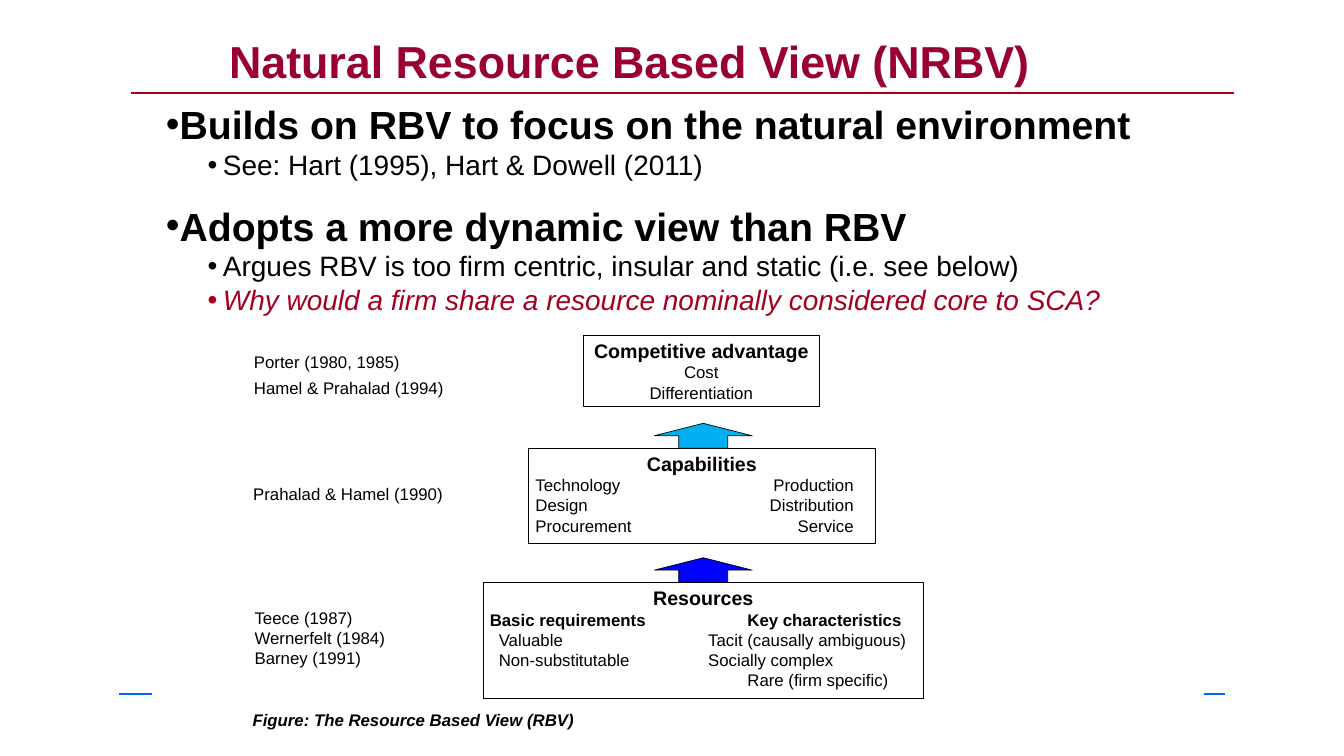
"""Build the Natural Resource Based View slide."""
from lxml import etree
from pptx import Presentation
from pptx.dml.color import RGBColor
from pptx.enum.shapes import MSO_CONNECTOR, MSO_SHAPE
from pptx.enum.text import MSO_ANCHOR, PP_ALIGN
from pptx.oxml.ns import qn
from pptx.util import Pt

STRAIGHT = MSO_CONNECTOR.STRAIGHT
RECTANGLE, UP_ARROW = MSO_SHAPE.RECTANGLE, MSO_SHAPE.UP_ARROW
TOP, MIDDLE = MSO_ANCHOR.TOP, MSO_ANCHOR.MIDDLE
LEFT, CENTER = PP_ALIGN.LEFT, PP_ALIGN.CENTER
COLORS = {"title": "990033", "accent": "A50021", "footer": "0066FF", "black": "000000",
          "light arrow": "00B0F0", "dark arrow": "0101FF"}


def color(name):
    return RGBColor.from_string(COLORS[name])


def write(frame, text, size=18, bold=False, italic=False, ink="black", align=LEFT,
          before=0, bullet=False, margin=0, hanging=0, tabs=()):
    first = frame.paragraphs[0]
    para = frame.add_paragraph() if first.runs else first
    para.alignment, para.space_before = align, Pt(before)
    span = para.add_run()
    span.text = text
    font = span.font
    font.name, font.size, font.bold, font.italic = "Arial", Pt(size), bold, italic
    font.color.rgb = color(ink)
    properties = para._p.get_or_add_pPr()
    if bullet:
        properties.set("marL", str(Pt(margin)))
        properties.set("indent", str(-Pt(hanging)))
        etree.SubElement(properties, qn("a:buFont"), typeface="Arial")
        etree.SubElement(properties, qn("a:buChar"), char="•")
    if tabs:
        stops = etree.SubElement(properties, qn("a:tabLst"))
        for position, side in tabs:
            etree.SubElement(stops, qn("a:tab"), pos=str(Pt(position)), algn=side)


deck = Presentation()
deck.slide_width, deck.slide_height = Pt(1440), Pt(810)
page = deck.slides.add_slide(deck.slide_layouts[6])

for start, end, y, ink in [(127.4, 162.7, 743.8, "footer"), (1289.5, 1312.6, 743.8, "footer"),
                           (140.4, 1321.9, 99.4, "accent")]:
    rule = page.shapes.add_connector(STRAIGHT, Pt(start), Pt(y), Pt(end), Pt(y))
    rule.line.color.rgb, rule.line.width = color(ink), Pt(2.25)
    etree.SubElement(rule._element.spPr, qn("a:effectLst"))

heading = dict(size=42, bold=True, bullet=True)
detail = dict(size=30, bullet=True, margin=61.2, hanging=16.5)
text_boxes = [
    (238.3, 32.4, 996.5, 65.5, [
        ("Natural Resource Based View (NRBV)", dict(size=48, bold=True, ink="title"))]),
    (170.6, 104.4, 1134, 240.5, [
        ("Builds on RBV to focus on the natural environment", heading),
        ("See: Hart (1995), Hart & Dowell (2011)", detail),
        ("Adopts a more dynamic view than RBV", dict(heading, before=22)),
        ("Argues RBV is too firm centric, insular and static (i.e. see below)", detail),
        ("Why would a firm share a resource nominally considered core to SCA?",
         dict(detail, italic=True, ink="accent"))]),
    (265, 373, 178.6, 28.8, [("Porter (1980, 1985)", {})]),
    (265, 401, 226, 28.8, [("Hamel & Prahalad (1994)", {})]),
    (264.2, 514.8, 226, 28.8, [("Prahalad & Hamel (1990)", {})]),
    (265.7, 647.3, 162.7, 72.7, [
        ("Teece (1987)", {}), ("Wernerfelt (1984)", {}), ("Barney (1991)", {})]),
    (263.5, 756.7, 369.4, 28.8, [
        ("Figure: The Resource Based View (RBV)", dict(bold=True, italic=True))]),
]
for left, top, width, height, lines in text_boxes:
    box = page.shapes.add_textbox(Pt(left), Pt(top), Pt(width), Pt(height))
    box.text_frame.word_wrap = True
    for text, style in lines:
        write(box.text_frame, text, **style)

box_title = dict(size=21, bold=True, align=CENTER)
right_column = dict(tabs=[(341, "r")])
indented = dict(tabs=[(9.6, "l"), (234, "l")])
stages = [
    (625, 359.3, 252.7, 76.3, [
        ("Competitive advantage", box_title),
        ("Cost", dict(align=CENTER)),
        ("Differentiation", dict(align=CENTER))]),
    (566.6, 480.2, 370.8, 101.5, [
        ("Capabilities", box_title),
        ("Technology\tProduction", right_column),
        ("Design\tDistribution", right_column),
        ("Procurement\tService", right_column)]),
    (517.7, 624.2, 471.6, 123.8, [
        ("Resources", box_title),
        ("Basic requirements\tKey characteristics", dict(bold=True, tabs=[(276, "l")])),
        ("\tValuable\tTacit (causally ambiguous)", indented),
        ("\tNon-substitutable\tSocially complex", indented),
        ("\tRare (firm specific)", dict(tabs=[(276, "l")]))]),
]
for left, top, width, height, lines in stages:
    box = page.shapes.add_shape(RECTANGLE, Pt(left), Pt(top), Pt(width), Pt(height))
    box.shadow.inherit = False
    box.fill.background()
    box.line.color.rgb, box.line.width = color("black"), Pt(0.75)
    box.text_frame.word_wrap, box.text_frame.vertical_anchor = True, TOP
    for text, style in lines:
        write(box.text_frame, text, **style)

for top, ink in [(453.6, "light arrow"), (597.6, "dark arrow")]:
    arrow = page.shapes.add_shape(UP_ARROW, Pt(701), Pt(top), Pt(105), Pt(26.6))
    arrow.shadow.inherit = False
    arrow.fill.solid()
    arrow.fill.fore_color.rgb = color(ink)
    arrow.line.color.rgb, arrow.line.width = color("black"), Pt(0.75)

deck.save("out.pptx")
